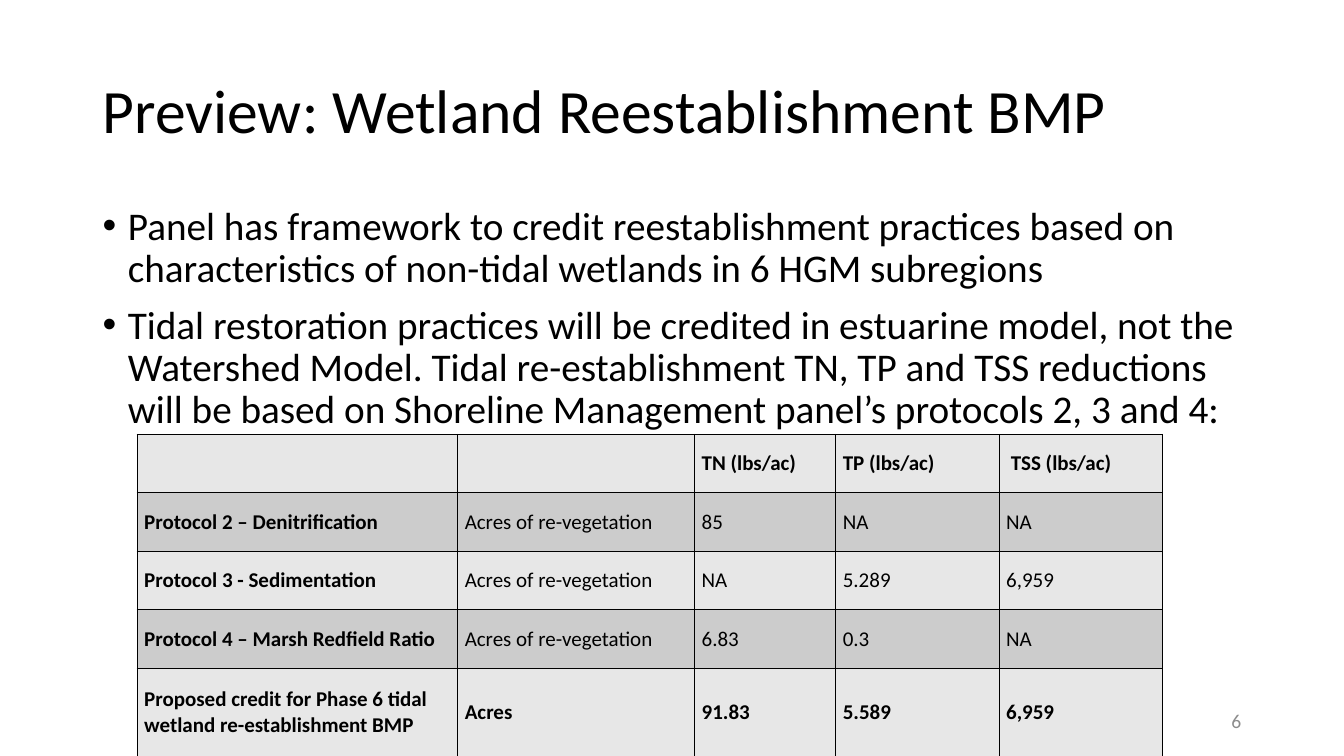
"""Build the wetland reestablishment preview slide."""
from lxml import etree
from pptx import Presentation, util as u
from pptx.dml.color import RGBColor
from pptx.enum import text
from pptx.oxml.ns import qn

W, H = 13.33, 7.5
MARGIN = 0.92
CONTENT_W = W - 2 * MARGIN
FONT = "Calibri"
BLACK, GREY = "000000", "8C8C8C"
BANDS = ("E7E7E7", "CCCCCC")
COLUMNS = (3.18, 2.35, 1.4, 1.62, 1.62)
ROWS = (0.58,) * 4 + (0.88,)
BULLETS = (
    "Panel has framework to credit reestablishment practices based on "
    "characteristics of non-tidal wetlands in 6 HGM subregions",
    "Tidal restoration practices will be credited in estuarine model, not the "
    "Watershed Model. Tidal re-establishment TN, TP and TSS reductions will be "
    "based on Shoreline Management panel’s protocols 2, 3 and 4:",
)
CREDITS = (
    ("", "", "TN (lbs/ac)", "TP (lbs/ac)", " TSS (lbs/ac)"),
    ("Protocol 2 – Denitrification", "Acres of re-vegetation", "85", "NA", "NA"),
    ("Protocol 3 - Sedimentation", "Acres of re-vegetation", "NA", "5.289", "6,959"),
    ("Protocol 4 – Marsh Redfield Ratio", "Acres of re-vegetation", "6.83", "0.3", "NA"),
    ("Proposed credit for Phase 6 tidal wetland re-establishment BMP",
     "Acres", "91.83", "5.589", "6,959"),
)


def rgb(value):
    """Return a colour from its hex string."""
    return RGBColor.from_string(value)


def add_run(p, words, size, color=BLACK, bold=False):
    """Append a formatted run to a paragraph."""
    r = p.add_run()
    r.text = words
    r.font.name, r.font.size, r.font.bold = FONT, u.Pt(size), bold
    r.font.color.rgb = rgb(color)


def place(sp, left, top, width, height):
    """Position a shape, given in inches."""
    sp.left, sp.top = u.Inches(left), u.Inches(top)
    sp.width, sp.height = u.Inches(width), u.Inches(height)


def set_frame(sp, anchor):
    """Make a shape's text wrap at a fixed size and return its frame."""
    tf = sp.text_frame
    tf.word_wrap = True
    tf.auto_size = text.MSO_AUTO_SIZE.NONE
    tf.vertical_anchor = anchor
    return tf


def add_title(s, words):
    """Format and fill the title placeholder."""
    sp = s.shapes.title
    place(sp, MARGIN, 0.4, CONTENT_W, 1.45)
    p = set_frame(sp, text.MSO_ANCHOR.MIDDLE).paragraphs[0]
    p.alignment, p.line_spacing = text.PP_ALIGN.LEFT, 0.9
    add_run(p, words, 44)


def add_text(s, box):
    """Add an empty text box."""
    return s.shapes.add_textbox(*(u.Inches(v) for v in box))


def add_bullets(s, items):
    """Add the bulleted list with hanging indents."""
    tf = set_frame(add_text(s, (MARGIN, 2, CONTENT_W, 4.76)), text.MSO_ANCHOR.TOP)
    for i, words in enumerate(items):
        p = tf.add_paragraph() if i else tf.paragraphs[0]
        p.line_spacing, p.space_before = 0.9, u.Pt(10)
        pPr = p._p.get_or_add_pPr()
        pPr.set("marL", str(u.Inches(0.25)))
        pPr.set("indent", str(-u.Inches(0.25)))
        etree.SubElement(pPr, qn("a:buFont"), typeface="Arial")
        etree.SubElement(pPr, qn("a:buChar"), char="•")
        add_run(p, words, 28)


def add_page_number(s, number):
    """Add the right-aligned page number."""
    sp = add_text(s, (W - MARGIN - 3, 6.95, 3, 0.4))
    p = set_frame(sp, text.MSO_ANCHOR.MIDDLE).paragraphs[0]
    p.alignment = text.PP_ALIGN.RIGHT
    add_run(p, number, 14, GREY)


def add_borders(cell):
    """Draw a thin black line on each side of a cell."""
    tcPr = cell._tc.get_or_add_tcPr()
    for side in "LRTB":
        ln = etree.SubElement(tcPr, qn(f"a:ln{side}"), w=str(u.Pt(1)))
        fill = etree.SubElement(ln, qn("a:solidFill"))
        etree.SubElement(fill, qn("a:srgbClr"), val=BLACK)


def fill_cell(cell, words, band, bold):
    """Format one table cell and write its text."""
    add_borders(cell)
    cell.fill.solid()
    cell.fill.fore_color.rgb = rgb(band)
    cell.vertical_anchor = text.MSO_ANCHOR.MIDDLE
    cell.margin_left = cell.margin_right = u.Inches(0.07)
    cell.margin_top = cell.margin_bottom = 0
    if words:
        add_run(cell.text_frame.paragraphs[0], words, 15, bold=bold)


def add_credit_table(s, rows):
    """Add the banded table of credits per protocol."""
    box = (1.36, 4.31, sum(COLUMNS), sum(ROWS))
    table = s.shapes.add_table(len(ROWS), len(COLUMNS),
                               *(u.Inches(v) for v in box)).table
    for column, width in zip(table.columns, COLUMNS):
        column.width = u.Inches(width)
    for i, (values, height) in enumerate(zip(rows, ROWS)):
        table.rows[i].height = u.Inches(height)
        for j, words in enumerate(values):
            bold = i in (0, len(ROWS) - 1) or j == 0
            fill_cell(table.cell(i, j), words, BANDS[i % 2], bold)


def main():
    """Build and save the slide."""
    prs = Presentation()
    prs.slide_width, prs.slide_height = u.Inches(W), u.Inches(H)
    s = prs.slides.add_slide(prs.slide_layouts[5])
    add_title(s, "Preview: Wetland Reestablishment BMP")
    add_bullets(s, BULLETS)
    add_page_number(s, "6")
    add_credit_table(s, CREDITS)
    prs.save("out.pptx")


if __name__ == "__main__":
    main()
